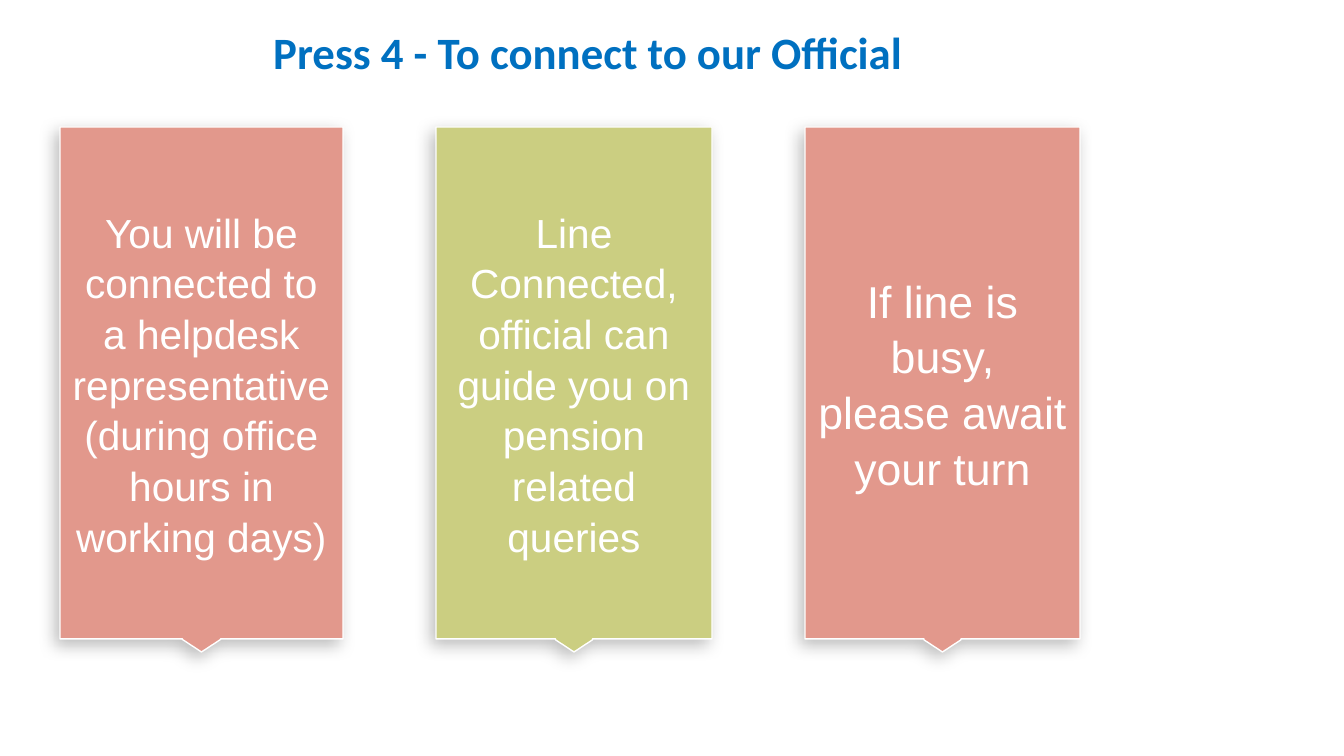
import dataclasses

import lxml.etree
import pptx
import pptx.dml.color
import pptx.enum.shapes
import pptx.enum.text
import pptx.oxml.ns
import pptx.util

PX = 914400 / 100.8  # EMU in one px


@dataclasses.dataclass(frozen=True)
class Theme:
    title: str = "0070C0"
    coral: str = "E2988C"
    olive: str = "CBCE81"
    white: str = "FFFFFF"
    shadow: str = "000000"
    title_font: str = "Calibri"
    card_font: str = "Arial"
    title_size: float = 32
    card_size: float = 29
    large_card_size: float = 31.9


THEME = Theme()
CARD_TOP, CARD_HEIGHT = 127, 525
CALLOUT = (0.25, 0.067, 0.044, 0.975)

# left, width, fill, text size, text
CARDS = [
    (60, 283, THEME.coral, THEME.card_size,
     "You will be connected to a helpdesk representative "
     "(during office hours in working days)"),
    (436, 276, THEME.olive, THEME.card_size,
     "Line Connected, official can guide you on pension related queries"),
    (805, 275, THEME.coral, THEME.large_card_size,
     "If line is busy,\vplease await your turn"),
]


def px(n):
    return pptx.util.Emu(round(n * PX))


def rgb(color):
    return pptx.dml.color.RGBColor.from_string(color)


def set_text(sp, text, font, size, color, anchor, bold=False):
    tf = sp.text_frame
    tf.word_wrap = True
    tf.auto_size = pptx.enum.text.MSO_AUTO_SIZE.NONE
    tf.vertical_anchor = anchor
    tf.text = text
    p = tf.paragraphs[0]
    p.alignment = pptx.enum.text.PP_ALIGN.CENTER
    for r in p.runs:
        r.font.name = font
        r.font.size = pptx.util.Pt(size)
        r.font.bold = bold
        r.font.color.rgb = rgb(color)
    return p


def add_soft_shadow(sp):
    sp.shadow.inherit = False
    effects = sp._element.spPr.find(pptx.oxml.ns.qn("a:effectLst"))
    shadow = lxml.etree.SubElement(
        effects, pptx.oxml.ns.qn("a:outerShdw"),
        blurRad=str(pptx.util.Pt(12)), dist=str(pptx.util.Pt(5)),
        dir=str(135 * 60000), algn="tr", rotWithShape="0")
    color = lxml.etree.SubElement(
        shadow, pptx.oxml.ns.qn("a:srgbClr"), val=THEME.shadow)
    lxml.etree.SubElement(color, pptx.oxml.ns.qn("a:alpha"), val="26000")


def add_title(s, text):
    sp = s.shapes.title
    sp.left, sp.top, sp.width, sp.height = px(252), px(20), px(672), px(65)
    set_text(sp, text, THEME.title_font, THEME.title_size, THEME.title,
             pptx.enum.text.MSO_ANCHOR.TOP, bold=True)


def add_card(s, left, width, fill, size, text):
    sp = s.shapes.add_shape(
        pptx.enum.shapes.MSO_SHAPE.DOWN_ARROW_CALLOUT,
        px(left), px(CARD_TOP), px(width), px(CARD_HEIGHT))
    for i, value in enumerate(CALLOUT):
        sp.adjustments[i] = value
    sp.fill.solid()
    sp.fill.fore_color.rgb = rgb(fill)
    sp.line.color.rgb = rgb(THEME.white)
    sp.line.width = pptx.util.Pt(1)
    add_soft_shadow(sp)
    p = set_text(sp, text, THEME.card_font, size, THEME.white,
                 pptx.enum.text.MSO_ANCHOR.MIDDLE)
    p.line_spacing = 1.04


def main():
    prs = pptx.Presentation()
    prs.slide_width, prs.slide_height = px(1344), px(756)
    s = prs.slides.add_slide(prs.slide_layouts.get_by_name("Title Only"))

    # Heading
    add_title(s, "Press 4 - To connect to our Official")

    # Steps of the call
    for card in CARDS:
        add_card(s, *card)

    prs.save("out.pptx")


if __name__ == "__main__":
    main()
